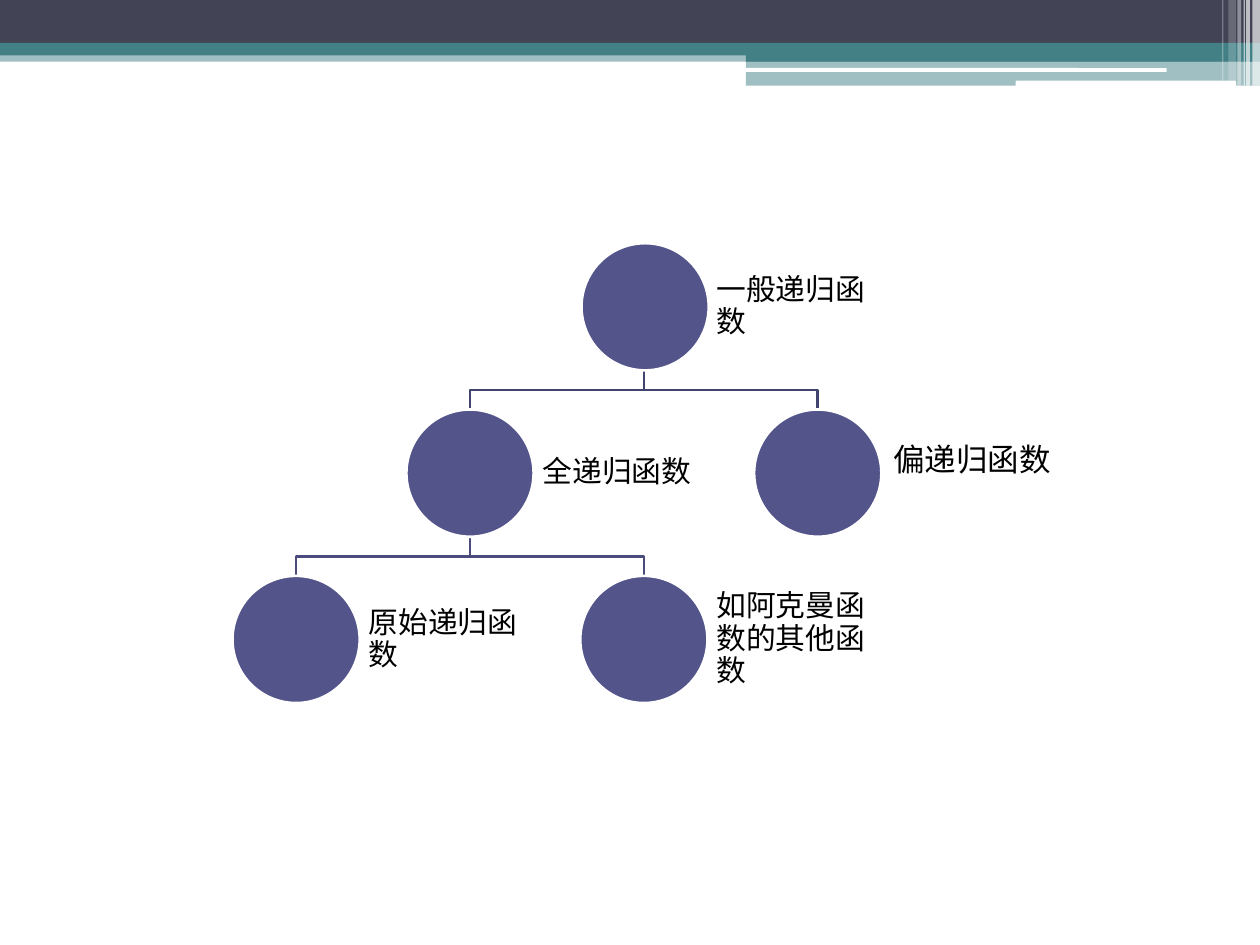
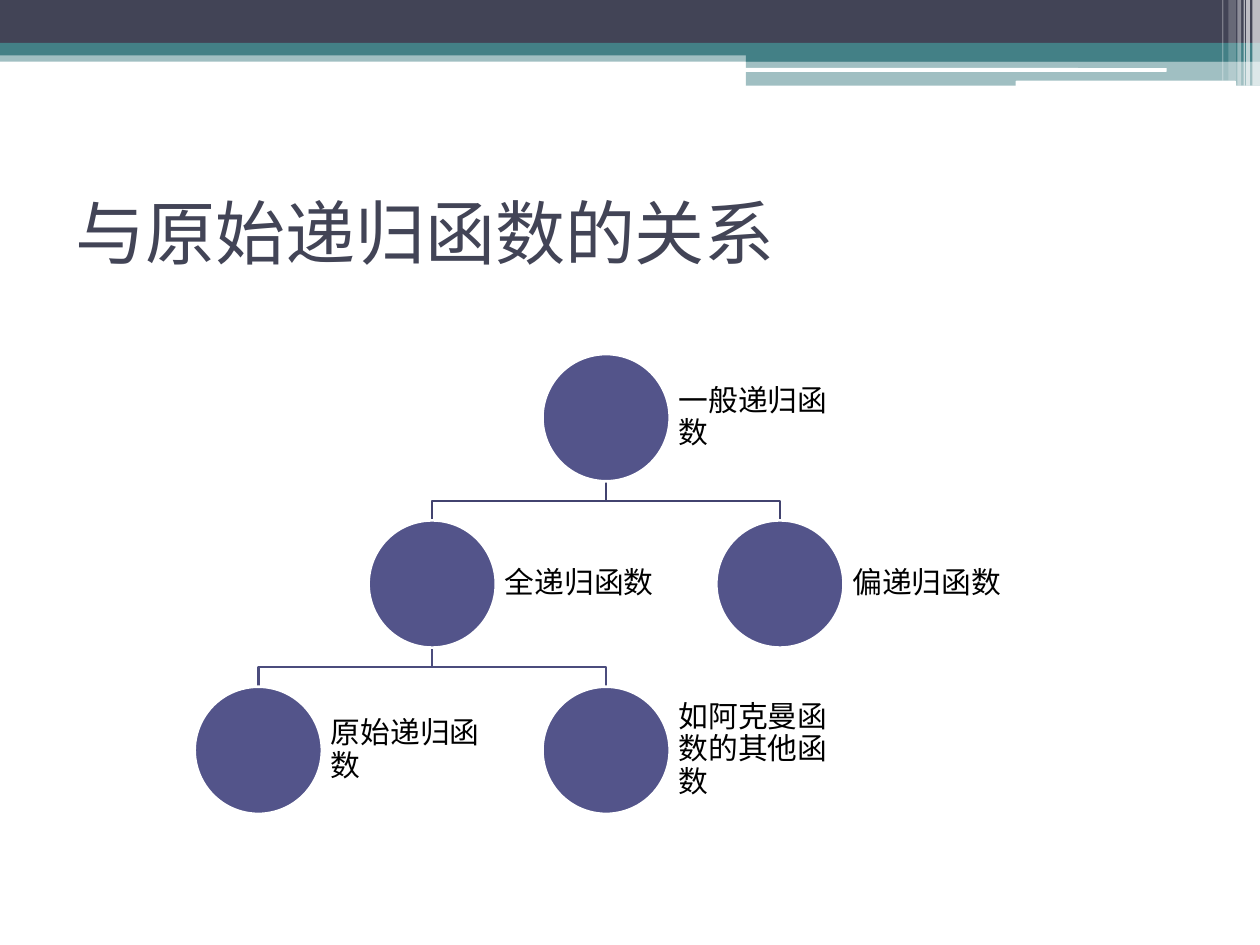
from pptx import Presentation
from pptx.dml.color import RGBColor
from pptx.enum.shapes import MSO_SHAPE as Shape
from pptx.enum.text import MSO_ANCHOR as Anchor, MSO_AUTO_SIZE as AutoSize, PP_ALIGN as Align
from pptx.oxml.ns import qn
from pptx.util import Inches, Pt
from lxml.etree import SubElement

INK = RGBColor(0x42, 0x44, 0x56)
TEAL = RGBColor(0x43, 0x80, 0x86)
WHITE = RGBColor(0xFF, 0xFF, 0xFF)
BLACK = RGBColor(0x00, 0x00, 0x00)
NODE = RGBColor(0x53, 0x54, 0x8A)
BRANCHES = (RGBColor(0x42, 0x43, 0x6F), RGBColor(0x4B, 0x4C, 0x7D))  # by level
TITLE_FONT, BODY_FONT = "Karla", "TeX Gyre Schola"

# Header bands: left, top, width, height, colour, opacity in percent
BANDS = [
    (0, 0.4, 10, 0.09, TEAL, 50),
    (0, 0, 10, 0.34, INK, 100),
    (0, 0.34, 10, 0.1, TEAL, 100),
    (5.92, 0.39, 4.08, 0.1, TEAL, 100),
    (5.92, 0.48, 4.08, 0.2, TEAL, 50),
]
PILLS = [
    (5.91, 0.54, 3.35, 0.03, WHITE, 100),
    (8.06, 0.64, 1.75, 0.05, WHITE, 100),
]
STRIPES = [
    (9.94, 0, 0.06, 0.68, WHITE, 65),
    (9.89, 0, 0.03, 0.68, WHITE, 65),
    (9.87, 0, 0.01, 0.68, WHITE, 60),
    (9.82, 0, 0.03, 0.68, WHITE, 40),
    (9.75, 0, 0.06, 0.64, WHITE, 20),
    (9.7, 0, 0.01, 0.64, WHITE, 30),
]

# Function classes: label -> (column, level, parent)
GENERAL, TOTAL, PARTIAL = "一般递归函数", "全递归函数", "偏递归函数"
FUNCTIONS = {
    GENERAL: (0, 0, None),
    TOTAL: (-1, 1, GENERAL),
    "原始递归函数": (-2, 2, TOTAL),
    "如阿克曼函数的其他函数": (0, 2, TOTAL),
    PARTIAL: (1, 1, GENERAL),
}

# Slides: title, root centre x, root top, root circle shift, loose labels (left, top, width, height)
SLIDES = [
    (None, 5.11, 1.93, 0.01, {PARTIAL: (6.99, 3.44, 2.1, 0.4)}),
    ("与原始递归函数的关系", 4.81, 2.81, 0, {}),
]

DIAMETER, COLUMN_STEP, LEVEL_STEP = 1.01, 1.38, 1.32
LABEL_WIDTH, LABEL_INSET = 1.51, 0.07


def box(*lengths):
    return [Inches(length) for length in lengths]


def add_filled(slide, preset, place, colour, opacity=100):
    shape = slide.shapes.add_shape(preset, *box(*place))
    shape.shadow.inherit = False
    shape.fill.solid()
    shape.fill.fore_color.rgb = colour
    if opacity < 100:
        for srgb in shape.element.iter(qn("a:srgbClr")):
            SubElement(srgb, qn("a:alpha")).set("val", str(opacity * 1000))
    shape.line.fill.background()
    return shape


def add_header(slide, master):
    """Build the header bands and hand them to the master, so every slide shows them."""
    bands = [(Shape.RECTANGLE, band) for band in BANDS]
    bands += [(Shape.ROUNDED_RECTANGLE, pill) for pill in PILLS]
    bands += [(Shape.RECTANGLE, stripe) for stripe in STRIPES]
    for number, (preset, (*place, colour, opacity)) in enumerate(bands, 100):
        element = add_filled(slide, preset, place, colour, opacity).element
        element.nvSpPr.cNvPr.set("id", str(number))
        master.shapes.element.append(element)


def add_title(slide, wording):
    title = slide.shapes.title
    title.left, title.top, title.width, title.height = box(0.5, 1.25, 9, 1.17)
    frame = title.text_frame
    frame.text = wording
    frame.auto_size = AutoSize.NONE
    frame.vertical_anchor = Anchor.MIDDLE
    heading = frame.paragraphs[0]
    heading.alignment = Align.LEFT
    heading.font.name, heading.font.size = TITLE_FONT, Pt(40)
    heading.font.color.rgb = INK


def add_branch(slide, parent, child, colour):
    (x1, parent_top), (x2, y2) = parent, child
    y1 = parent_top + DIAMETER
    middle = (y1 + y2) / 2
    start, *bends = [box(*point) for point in ((x1, y1), (x1, middle), (x2, middle), (x2, y2))]
    builder = slide.shapes.build_freeform(*start)
    builder.add_line_segments(bends, close=False)
    branch = builder.convert_to_shape()
    branch.shadow.inherit = False
    branch.fill.background()
    branch.line.color.rgb = colour
    branch.line.width = Pt(1.5)


def add_label(slide, wording, place, loose):
    label = slide.shapes.add_textbox(*box(*place))
    frame = label.text_frame
    frame.word_wrap = True
    frame.text = wording
    line = frame.paragraphs[0]
    line.font.name, line.font.size = BODY_FONT, Pt(18 if loose else 17)
    line.font.color.rgb = BLACK
    if loose:
        frame.auto_size = AutoSize.SHAPE_TO_FIT_TEXT
        return
    frame.vertical_anchor = Anchor.MIDDLE
    frame.margin_left = frame.margin_right = Inches(LABEL_INSET)
    frame.margin_top = frame.margin_bottom = Inches(LABEL_INSET)
    line.line_spacing = 0.9
    line.space_after = Pt(6)


def add_tree(slide, root_x, root_top, root_shift, loose_labels):
    spots = {name: (root_x + column * COLUMN_STEP, root_top + level * LEVEL_STEP)
             for name, (column, level, _) in FUNCTIONS.items()}
    # Branches lie behind the circles
    for name, (_, level, parent) in FUNCTIONS.items():
        if parent:
            add_branch(slide, spots[parent], spots[name], BRANCHES[level - 1])
    for name, (x, top) in spots.items():
        shift = root_shift if name == GENERAL else 0
        place = (x - DIAMETER / 2 + shift, top, DIAMETER, DIAMETER)
        circle = add_filled(slide, Shape.OVAL, place, NODE)
        circle.line.color.rgb = WHITE
        circle.line.width = Pt(1.5)
        beside = (x + DIAMETER / 2, top, LABEL_WIDTH, DIAMETER)
        add_label(slide, name, loose_labels.get(name, beside), name in loose_labels)


def main():
    deck = Presentation()
    deck.slide_width, deck.slide_height = box(10, 7.5)
    title_only, blank = deck.slide_layouts[5], deck.slide_layouts[6]
    for number, (title, *tree) in enumerate(SLIDES):
        slide = deck.slides.add_slide(title_only if title else blank)
        if number == 0:
            add_header(slide, deck.slide_master)
        if title:
            add_title(slide, title)
        add_tree(slide, *tree)
    deck.save("out.pptx")


if __name__ == "__main__":
    main()
